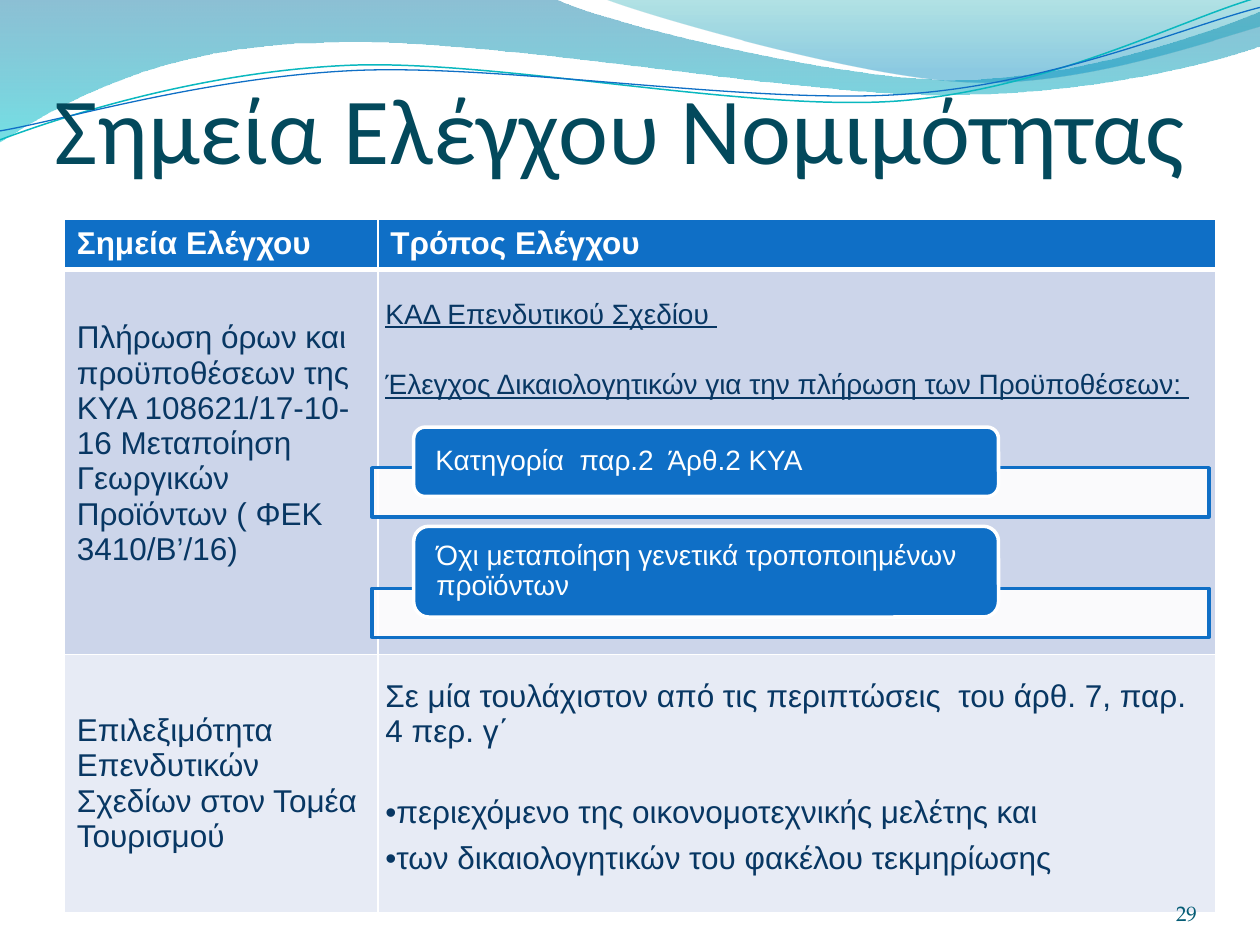
from lxml import etree
from pptx import Presentation
from pptx import util as u
from pptx.dml.color import RGBColor
from pptx.enum import shapes, text
from pptx.oxml.ns import qn

BLUE = RGBColor(0x0F, 0x6F, 0xC6)
CYAN = RGBColor(0x0A, 0xB8, 0xBF)
WHITE = RGBColor(0xFF, 0xFF, 0xFF)
NAVY = RGBColor(0x08, 0x37, 0x63)
TITLE_TEAL = RGBColor(0x03, 0x49, 0x5C)
NUMBER_TEAL = RGBColor(0x04, 0x5C, 0x75)
ROW_DARK = RGBColor(0xCC, 0xD5, 0xEA)
ROW_LIGHT = RGBColor(0xE7, 0xEB, 0xF5)

# Gradient stops: position, colour, opacity in percent
LEFT_GRADIENT = [(0, RGBColor(0x00, 0x74, 0xA1), 45), (1, RGBColor(0x00, 0xC6, 0xCF), 55)]
RIGHT_GRADIENT = [(0, RGBColor(0x00, 0xA1, 0xA9), 30), (0.8, RGBColor(0x00, 0x8B, 0xBF), 45)]

# Outlines in cm: two numbers are a corner, six are a Bezier curve
LEFT_WAVE = [
    (0, -0.03), (11.18, -0.03),
    (12.09, 0.43, 16.87, 1.6, 19.25, 1.6), (21.67, 1.6, 24.33, 0.66, 25.4, 0.23),
    (25.43, 0.91), (24.97, 1.12, 22.1, 1.93, 18.95, 1.91),
    (15.8, 1.91, 9.7, 0.71, 6.53, 0.86), (3.25, 0.89, 1.17, 2.11, -0.03, 2.87),
]
RIGHT_WAVE = [
    (12.17, -0.03), (12.93, 0.28, 17.32, 1.57, 19.53, 1.65),
    (21.74, 1.75, 24.41, 0.81, 25.4, 0.53), (25.4, 0),
]
CYAN_LINE = [
    (-0.05, 2.22), (1.19, 1.82, 4.02, 1.04, 7.05, 1.05),
    (10.05, 1.07, 15.02, 2.37, 18.08, 2.29), (21.13, 2.2, 23.86, 0.91, 25.41, 0.55),
]
BLUE_LINE = [
    (-0.04, 2.04), (1.16, 1.9, 4.17, 1.15, 7.2, 1.16),
    (10.25, 1.18, 15.13, 2.23, 18.19, 2.16), (21.21, 2.1, 23.93, 1.06, 25.45, 0.75),
]
CURVE_ROTATION = -2.7

HEADER = dict(size=u.Pt(18), name="Arial", bold=True)
BODY = dict(size=u.Pt(18), name="Arial", bold=False)
CHECK = dict(size=u.Pt(16), name="Arial", underline=True)
LABEL = dict(size=u.Pt(16), name="Arial")


def set_values(target, values):
    for name, value in values.items():
        setattr(target, name, value)


def set_margins(target, left, top, right, bottom):
    set_values(target, dict(margin_left=u.Cm(left), margin_top=u.Cm(top),
                            margin_right=u.Cm(right), margin_bottom=u.Cm(bottom)))


def write(paragraph, wording, font, color, **layout):
    paragraph.text = wording
    set_values(paragraph, layout)
    set_values(paragraph.font, font)
    paragraph.font.color.rgb = color


def set_opacity(color_element, percent):
    etree.SubElement(color_element, qn("a:alpha"), val=str(percent * 1000))


def add_outline(slide, outline, close):
    """Draw straight segments, then join each three of a curve into one Bezier."""
    start, *points = [(u.Cm(x), u.Cm(y)) for segment in outline
                      for x, y in zip(segment[::2], segment[1::2])]
    builder = slide.shapes.build_freeform(*start)
    builder.add_line_segments(points, close=close)
    shape = builder.convert_to_shape()
    shape.shadow.inherit = False
    lines = iter(list(shape.element.spPr.iter(qn("a:lnTo"))))
    for segment in outline[1:]:
        line = next(lines)
        if len(segment) == 6:
            curve = etree.Element(qn("a:cubicBezTo"))
            line.addprevious(curve)
            for control in (line, next(lines), next(lines)):
                curve.append(control[0])
                control.getparent().remove(control)
    return shape


def add_wave(slide, outline, stops):
    wave = add_outline(slide, outline, True)
    wave.line.fill.background()
    wave.fill.gradient()
    wave.fill.gradient_angle = 270
    for stop, (position, color, opacity) in zip(wave.fill.gradient_stops, stops):
        stop.position = position
        stop.color.rgb = color
    for element, stop in zip(wave.element.spPr.iter(qn("a:srgbClr")), stops):
        set_opacity(element, stop[2])


def add_curve(slide, outline, color, width):
    curve = add_outline(slide, outline, False)
    curve.rotation = CURVE_ROTATION
    curve.fill.background()
    curve.line.color.rgb = color
    curve.line.width = u.Pt(width)


def format_title(slide):
    title = slide.shapes.title
    title.element.getparent().append(title.element)  # in front of the waves
    set_values(title, dict(left=u.Cm(1.09), top=u.Cm(2.13), width=u.Cm(22.86), height=u.Cm(1.57)))
    frame = title.text_frame
    set_values(frame, dict(vertical_anchor=text.MSO_ANCHOR.BOTTOM, word_wrap=True,
                           auto_size=text.MSO_AUTO_SIZE.NONE))
    set_margins(frame, 0, 0.13, 0, 0)
    write(frame.paragraphs[0], "Σημεία Ελέγχου Νομιμότητας",
          dict(size=u.Pt(54), name="Calibri"), TITLE_TEAL, alignment=text.PP_ALIGN.LEFT)


def add_bullet(paragraph):
    properties = paragraph._p.get_or_add_pPr()
    properties.set("marL", "0")
    properties.set("indent", "0")
    etree.SubElement(properties, qn("a:buFont"), typeface="Arial")
    etree.SubElement(properties, qn("a:buChar"), char="•")


def set_borders(cell, top, bottom):
    properties = cell._tc.get_or_add_tcPr()
    for index, (side, width) in enumerate(dict(L=1, R=1, T=top, B=bottom).items()):
        line = etree.Element(qn(f"a:ln{side}"), w=str(u.Pt(width)))
        fill = etree.SubElement(line, qn("a:solidFill"))
        etree.SubElement(fill, qn("a:srgbClr"), val=str(WHITE))
        properties.insert(index, line)


def add_check_table(slide):
    table = slide.shapes.add_table(3, 2, u.Cm(1.3), u.Cm(4.42), u.Cm(23.21), u.Cm(13.98)).table
    set_values(table, dict(first_row=False, horz_banding=False))
    for column, width in zip(table.columns, (6.32, 16.89)):
        column.width = u.Cm(width)
    for row, height in zip(table.rows, (1.01, 7.76, 5.21)):
        row.height = u.Cm(height)
    for row_index, fill in enumerate((BLUE, ROW_DARK, ROW_LIGHT)):
        for column_index in range(2):
            cell = table.cell(row_index, column_index)
            cell.fill.solid()
            cell.fill.fore_color.rgb = fill
            set_borders(cell, 3 if row_index == 1 else 1, 3 if row_index == 0 else 1)
            if row_index and column_index:
                set_margins(cell, 0.15, 0.5, 0.15, 0.2)
            else:
                set_margins(cell, 0.25, 0.13, 0.25, 0.13)
            if row_index and not column_index:
                cell.vertical_anchor = text.MSO_ANCHOR.MIDDLE
    table.cell(1, 0).margin_bottom = u.Cm(0.86)  # lifts the centred text
    return table


def fill_check_table(table):
    for index, heading in enumerate(("Σημεία Ελέγχου", "Τρόπος Ελέγχου")):
        write(table.cell(0, index).text_frame.paragraphs[0], heading, HEADER, WHITE)
    points = ("Πλήρωση όρων και προϋποθέσεων της ΚΥΑ 108621/17-10-16 Μεταποίηση "
              "Γεωργικών Προϊόντων ( ΦΕΚ 3410/Β’/16)",
              "Επιλεξιμότητα Επενδυτικών Σχεδίων στον Τομέα Τουρισμού")
    for index, point in enumerate(points, 1):
        write(table.cell(index, 0).text_frame.paragraphs[0], point, BODY, NAVY)

    checks = table.cell(1, 1).text_frame
    write(checks.paragraphs[0], "ΚΑΔ Επενδυτικού Σχεδίου ", CHECK, NAVY, line_spacing=1.15)
    write(checks.add_paragraph(), "Έλεγχος Δικαιολογητικών για την πλήρωση των Προϋποθέσεων: ",
          CHECK, NAVY, line_spacing=1.15, space_before=u.Pt(20))

    cases = table.cell(2, 1).text_frame
    write(cases.paragraphs[0],
          "Σε μία τουλάχιστον από τις περιπτώσεις  του άρθ. 7, παρ. 4 περ. γ΄", BODY, NAVY)
    for wording, gap in (("περιεχόμενο της οικονομοτεχνικής μελέτης και", 26),
                         ("των δικαιολογητικών του φακέλου τεκμηρίωσης", 6)):
        paragraph = cases.add_paragraph()
        add_bullet(paragraph)
        write(paragraph, wording, BODY, NAVY, space_before=u.Pt(gap))


def add_box(slide, kind, left, top, width, height, fill, line):
    box = slide.shapes.add_shape(kind, u.Cm(left), u.Cm(top), u.Cm(width), u.Cm(height))
    box.shadow.inherit = False
    box.fill.solid()
    box.fill.fore_color.rgb = fill
    box.line.color.rgb = line
    box.line.width = u.Pt(2)
    return box


def add_condition(slide, wording, label_top, label_height, bar_top):
    bar = add_box(slide, shapes.MSO_SHAPE.RECTANGLE, 7.5, bar_top, 16.87, 0.99, WHITE, BLUE)
    set_opacity(bar.element.spPr.find(f"{qn('a:solidFill')}/{qn('a:srgbClr')}"), 90)
    label = add_box(slide, shapes.MSO_SHAPE.ROUNDED_RECTANGLE,
                    8.34, label_top, 11.79, label_height, BLUE, WHITE)
    frame = label.text_frame
    set_values(frame, dict(word_wrap=True, vertical_anchor=text.MSO_ANCHOR.MIDDLE))
    set_margins(frame, 0.37, 0, 0.37, 0)
    write(frame.paragraphs[0], wording, LABEL, WHITE,
          alignment=text.PP_ALIGN.LEFT, line_spacing=0.9)


def add_page_number(slide):
    frame = slide.shapes.add_textbox(u.Cm(22.02), u.Cm(17.65), u.Cm(2.11), u.Cm(1.02)).text_frame
    set_values(frame, dict(word_wrap=True, vertical_anchor=text.MSO_ANCHOR.BOTTOM))
    set_margins(frame, 0, 0, 0, 0)
    write(frame.paragraphs[0], "29", dict(size=u.Pt(12), name="TeX Gyre Pagella"),
          NUMBER_TEAL, alignment=text.PP_ALIGN.RIGHT)


def main():
    presentation = Presentation()
    set_values(presentation, dict(slide_width=u.Cm(25.4), slide_height=u.Cm(19.05)))
    slide = presentation.slides.add_slide(presentation.slide_layouts[5])
    add_wave(slide, LEFT_WAVE, LEFT_GRADIENT)
    add_wave(slide, RIGHT_WAVE, RIGHT_GRADIENT)
    add_curve(slide, CYAN_LINE, CYAN, 0.85)
    add_curve(slide, BLUE_LINE, BLUE, 0.75)
    format_title(slide)
    fill_check_table(add_check_table(slide))
    add_page_number(slide)
    add_condition(slide, "Κατηγορία  παρ.2  Άρθ.2 ΚΥΑ", 8.61, 1.4, 9.43)
    add_condition(slide, "Όχι μεταποίηση γενετικά τροποποιημένων προϊόντων", 10.61, 1.83, 11.86)
    presentation.save("out.pptx")


if __name__ == "__main__":
    main()
